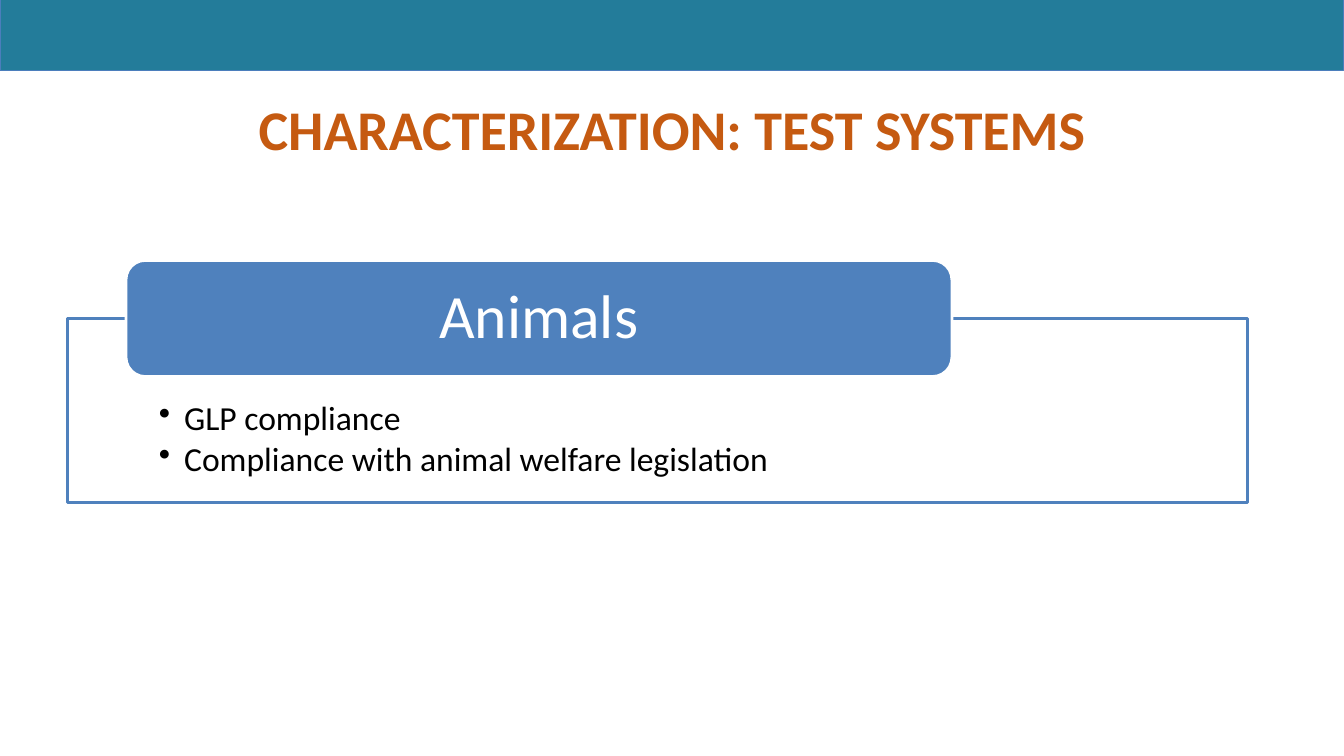
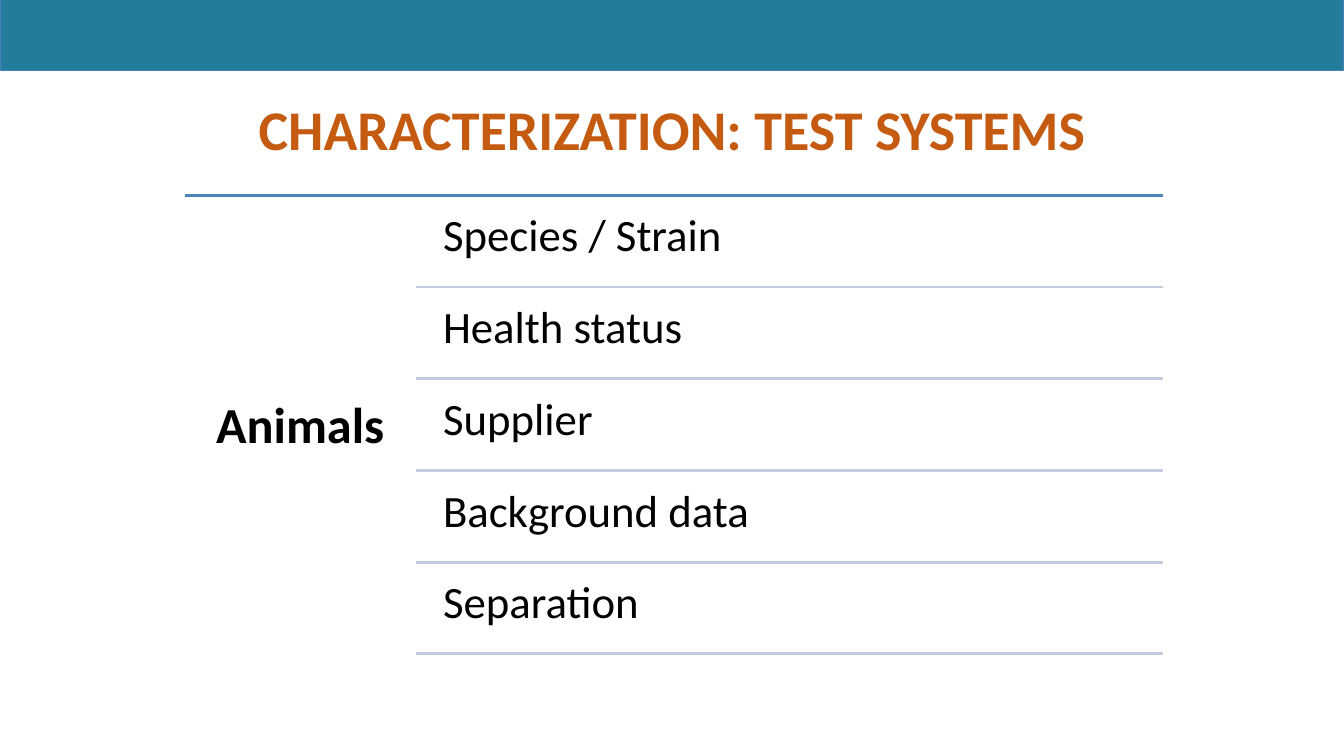
from lxml import etree
from pptx import Presentation
from pptx.dml.color import RGBColor
from pptx.enum.shapes import MSO_CONNECTOR, MSO_SHAPE
from pptx.enum.text import MSO_ANCHOR, PP_ALIGN
from pptx.oxml.ns import qn
from pptx.util import Pt

RECT, ROUND = MSO_SHAPE.RECTANGLE, MSO_SHAPE.ROUNDED_RECTANGLE
STRAIGHT = MSO_CONNECTOR.STRAIGHT
TOP, MIDDLE = MSO_ANCHOR.TOP, MSO_ANCHOR.MIDDLE
LEFT, CENTER = PP_ALIGN.LEFT, PP_ALIGN.CENTER


def rgb(color):
    return RGBColor.from_string(color)


def write(tf, *lines, size, color="000000", bold=False, align=LEFT, anchor=TOP,
          insets=(0, 0, 0, 0), spacing=0.9, gap=0, bullet=None):
    """Fill a text frame with one paragraph per line; insets run left, top, right, bottom."""
    tf.word_wrap = True
    tf.vertical_anchor = anchor
    tf.margin_left, tf.margin_top, tf.margin_right, tf.margin_bottom = map(Pt, insets)
    for i, line in enumerate(lines):
        p = tf.add_paragraph() if i else tf.paragraphs[0]
        if bullet:
            pPr = p._p.get_or_add_pPr()
            pPr.set("marL", str(Pt(18)))
            pPr.set("indent", str(-Pt(18)))
            etree.SubElement(pPr, qn("a:buChar")).set("char", bullet)
        p.alignment = align
        p.line_spacing = spacing
        p.space_after = Pt(gap)
        r = p.add_run()
        r.text = line
        r.font.name, r.font.size, r.font.bold = Deck.FONT, Pt(size), bold
        r.font.color.rgb = rgb(color)


class Deck:
    FONT = "Calibri"
    WIDTH, HEIGHT = 960, 540
    TEAL, TEAL_EDGE = "237C9A", "4B7EBC"
    ORANGE, BLUE, PALE, WHITE = "C55A11", "4F81BD", "C2CDE1", "FFFFFF"

    def __init__(self):
        self.prs = Presentation()
        self.prs.slide_width, self.prs.slide_height = Pt(self.WIDTH), Pt(self.HEIGHT)
        self.s = None

    def slide(self, title):
        """Start a slide with the top band and the title."""
        self.s = self.prs.slides.add_slide(self.prs.slide_layouts[6])
        self.box(RECT, 0, 0, self.WIDTH, 50.4, self.TEAL, self.TEAL_EDGE, 0.75)
        self.text(title, at=(48, 64, 864, 47), size=40, color=self.ORANGE, bold=True,
                  align=CENTER, insets=(7.2, 3.6, 7.2, 0), spacing=1)

    def box(self, kind, x, y, w, h, fill, line, weight=2):
        sp = self.s.shapes.add_shape(kind, Pt(x), Pt(y), Pt(w), Pt(h))
        sp.shadow.inherit = False
        sp.fill.solid()
        sp.fill.fore_color.rgb = rgb(fill)
        sp.line.color.rgb = rgb(line)
        sp.line.width = Pt(weight)
        return sp.text_frame

    def text(self, *lines, at, **style):
        write(self.s.shapes.add_textbox(*map(Pt, at)).text_frame, *lines, **style)

    def rule(self, x1, x2, y, color):
        cn = self.s.shapes.add_connector(STRAIGHT, Pt(x1), Pt(y), Pt(x2), Pt(y))
        cn.line.color.rgb = rgb(color)
        cn.line.width = Pt(2)
        etree.SubElement(cn._element.spPr, qn("a:effectLst"))


def compliance_slide(deck):
    deck.slide("CHARACTERIZATION: TEST SYSTEMS")
    # Outlined panel with bullets
    panel = deck.box(RECT, 48, 227.5, 843, 131.5, deck.WHITE, deck.BLUE)
    write(panel, "GLP compliance", "Compliance with animal welfare legislation",
          size=24, insets=(65.5, 59, 65.5, 13.5), gap=3.6, bullet="•")
    # Heading tab over the panel's top edge
    tab = deck.box(ROUND, 90, 186, 590, 83, deck.BLUE, deck.WHITE)
    write(tab, "Animals", size=44, color=deck.WHITE, align=CENTER, anchor=MIDDLE,
          insets=(22, 0, 22, 0))


def properties_slide(deck):
    deck.slide("CHARACTERIZATION: TEST SYSTEMS")
    left, column, right, top = 132, 297, 830.5, 139.5
    # Category on the left, under the main rule
    deck.rule(left, right, top, deck.BLUE)
    deck.text("Animals", at=(left, top, column - left, 331), size=36, bold=True,
              align=CENTER, anchor=MIDDLE, insets=(11,) * 4)
    # Equal rows, each closed by a pale rule
    row = 65.5
    items = ["Species / Strain", "Health status", "Supplier", "Background data", "Separation"]
    for i, item in enumerate(items):
        y = top + i * row
        deck.text(item, at=(column + 10, y + 3.3, right - column - 10, 62.5),
                  size=32, insets=(9.5,) * 4)
        deck.rule(column, right, y + row, deck.PALE)


def main():
    deck = Deck()
    compliance_slide(deck)
    properties_slide(deck)
    deck.prs.save("out.pptx")


if __name__ == "__main__":
    main()
